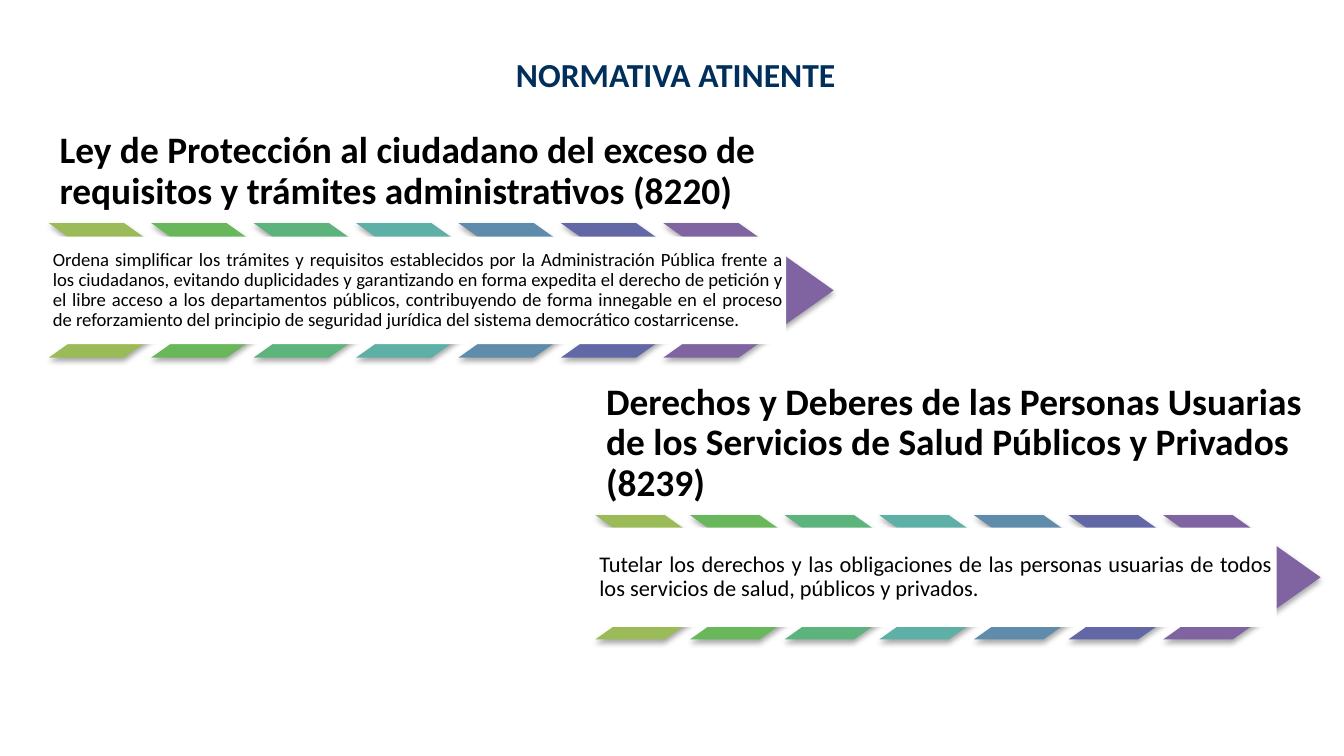
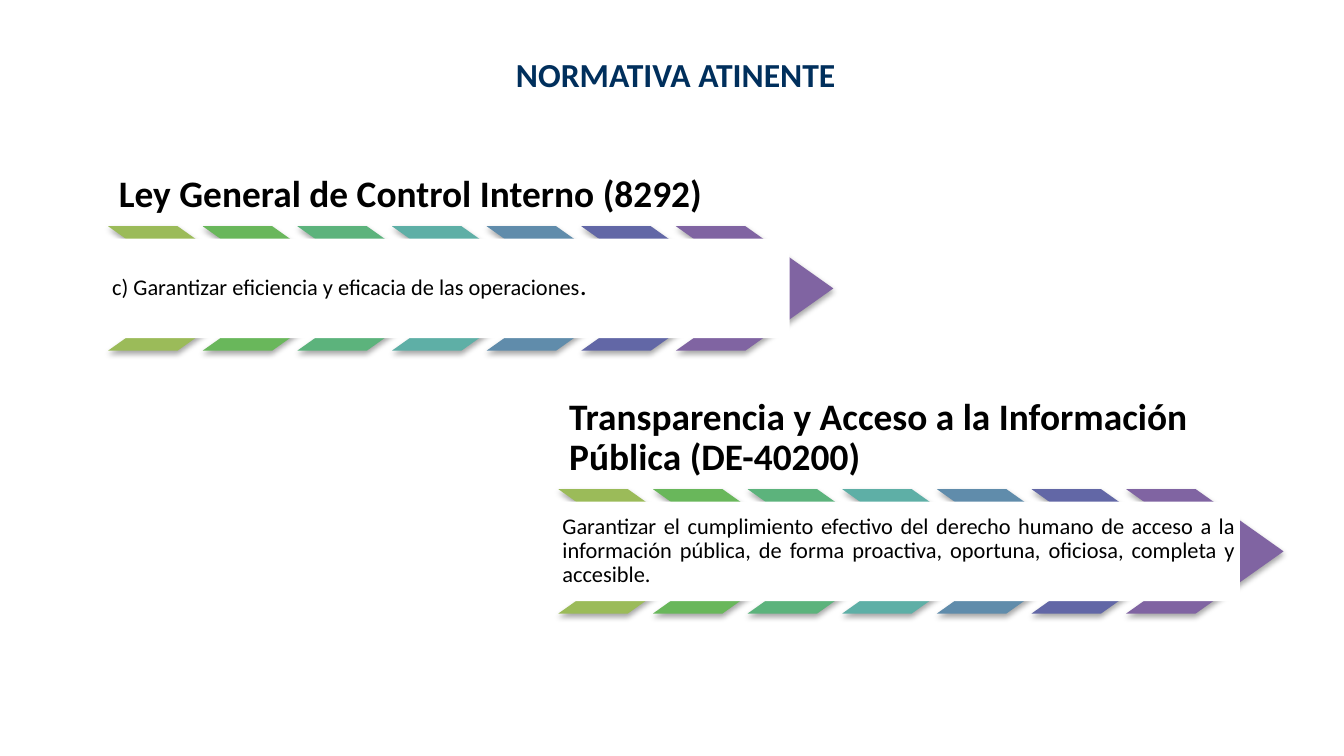
from dataclasses import dataclass

from lxml import etree
from pptx import Presentation
from pptx import util as u
from pptx.dml.color import RGBColor
from pptx.enum import shapes, text
from pptx.oxml import ns


@dataclass(frozen=True)
class Theme:
    font: str = "Calibri"
    title_color: str = "002F5C"
    ink: str = "000000"
    paper: str = "FFFFFF"
    chevrons: tuple = ("9BBB59", "69B75B", "5CB37C", "5EAFA6", "608CAB", "6267A6", "8064A2")
    title_size: int = 18
    heading_size: int = 20
    body_size: int = 12
    small_size: int = 10


THEME = Theme()
COLUMNS, ROWS = 100, 56.25
CELL = u.Inches(10) // COLUMNS
LEFT, CENTER, JUSTIFY = (
    text.PP_ALIGN.LEFT,
    text.PP_ALIGN.CENTER,
    text.PP_ALIGN.JUSTIFY,
)


def cells(*counts):
    return [u.Emu(round(count * CELL)) for count in counts]


def paint(item, color):
    item.fill.solid()
    item.fill.fore_color.rgb = RGBColor.from_string(color)


def add_text(parent, place, wording, size, color=THEME.ink, bold=False, align=LEFT,
             anchor=text.MSO_ANCHOR.MIDDLE, inset=0.3, spacing=0.9, bold_end=""):
    box = parent.shapes.add_textbox(*cells(*place))
    frame = box.text_frame
    frame.word_wrap = True
    frame.vertical_anchor = anchor
    frame.margin_left = frame.margin_right = cells(inset)[0]
    frame.margin_top = frame.margin_bottom = cells(inset)[0]
    para = frame.paragraphs[0]
    para.alignment = align
    para.line_spacing = spacing
    for part, strong in ((wording, bold), (bold_end, True)):
        if part:
            span = para.add_run()
            span.text = part
            span.font.name = THEME.font
            span.font.size = u.Pt(size)
            span.font.bold = strong
            span.font.color.rgb = RGBColor.from_string(color)


def add_plain_shape(parent, kind, place, color):
    shape = parent.shapes.add_shape(kind, *cells(*place))
    paint(shape, color)
    shape.line.fill.background()
    shape.shadow.inherit = False
    return shape


def add_chevron(parent, place, color):
    chevron = add_plain_shape(parent, shapes.MSO_SHAPE.CHEVRON, place, color)
    chevron.adjustments[0] = 0.706
    effects = chevron._element.spPr.find(ns.qn("a:effectLst"))
    shadow = etree.SubElement(effects, ns.qn("a:outerShdw"), blurRad=str(u.Pt(3.1)),
                              dist=str(u.Pt(1.8)), dir="5400000", rotWithShape="0")
    shade = etree.SubElement(shadow, ns.qn("a:srgbClr"), val=THEME.ink)
    etree.SubElement(shade, ns.qn("a:alpha"), val="35000")


def add_law(page, left, top, band, heading_width, heading, body,
            size=THEME.body_size, align=JUSTIFY, bold_end=""):
    group = page.shapes.add_group_shape()
    chevron_height, strip_height = band / 5.48, band / 6.85
    heading_height = band / 11.1
    add_text(group, (left, top - heading_height, heading_width, heading_height), heading,
             THEME.heading_size, bold=True, anchor=text.MSO_ANCHOR.BOTTOM, inset=0.8)
    for index, color in enumerate(THEME.chevrons):
        add_chevron(group, (left + index * band / 7.2, top, band / 4.33, chevron_height), color)
    strip = (left, top + (chevron_height - strip_height) / 2, band, strip_height)
    add_plain_shape(group, shapes.MSO_SHAPE.RECTANGLE, strip, THEME.paper)
    add_text(group, strip, body, size, align=align, bold_end=bold_end)


def add_page(deck):
    page = deck.slides.add_slide(deck.slide_layouts[6])
    paint(page.background, THEME.paper)
    add_text(page, (16.3, 3, 67.95, 5), "NORMATIVA ATINENTE", THEME.title_size,
             color=THEME.title_color, bold=True, align=CENTER, spacing=1)
    return page


def main():
    deck = Presentation()
    deck.slide_width, deck.slide_height = cells(COLUMNS, ROWS)

    page = add_page(deck)
    add_law(page, 3.63, 16.6, 54.87, 54.2,
            "Ley de Protección al ciudadano del exceso de requisitos y trámites "
            "administrativos (8220)",
            "Ordena simplificar los trámites y requisitos establecidos por la Administración "
            "Pública frente a los ciudadanos, evitando duplicidades y garantizando en forma "
            "expedita el derecho de petición y el libre acceso a los departamentos públicos, "
            "contribuyendo de forma innegable en el proceso de reforzamiento del principio de "
            "seguridad jurídica del sistema democrático costarricense.",
            size=THEME.small_size)
    add_law(page, 44.3, 38.33, 50.7, 55.7,
            "Derechos y Deberes de las Personas Usuarias de los Servicios de Salud Públicos "
            "y Privados (8239)",
            "Tutelar los derechos y las obligaciones de las personas usuarias de todos los "
            "servicios de salud, públicos y privados.")

    page = add_page(deck)
    add_law(page, 8.05, 16.84, 50.7, 50.1,
            "Ley General de Control Interno (8292)",
            "c) Garantizar eficiencia y eficacia de las operaciones",
            align=LEFT, bold_end=".")
    add_law(page, 41.55, 36.4, 50.7, 55.7,
            "Transparencia y Acceso a la Información Pública (DE-40200)",
            "Garantizar el cumplimiento efectivo del derecho humano de acceso a la información "
            "pública, de forma proactiva, oportuna, oficiosa, completa y accesible.")

    deck.save("out.pptx")


if __name__ == "__main__":
    main()
